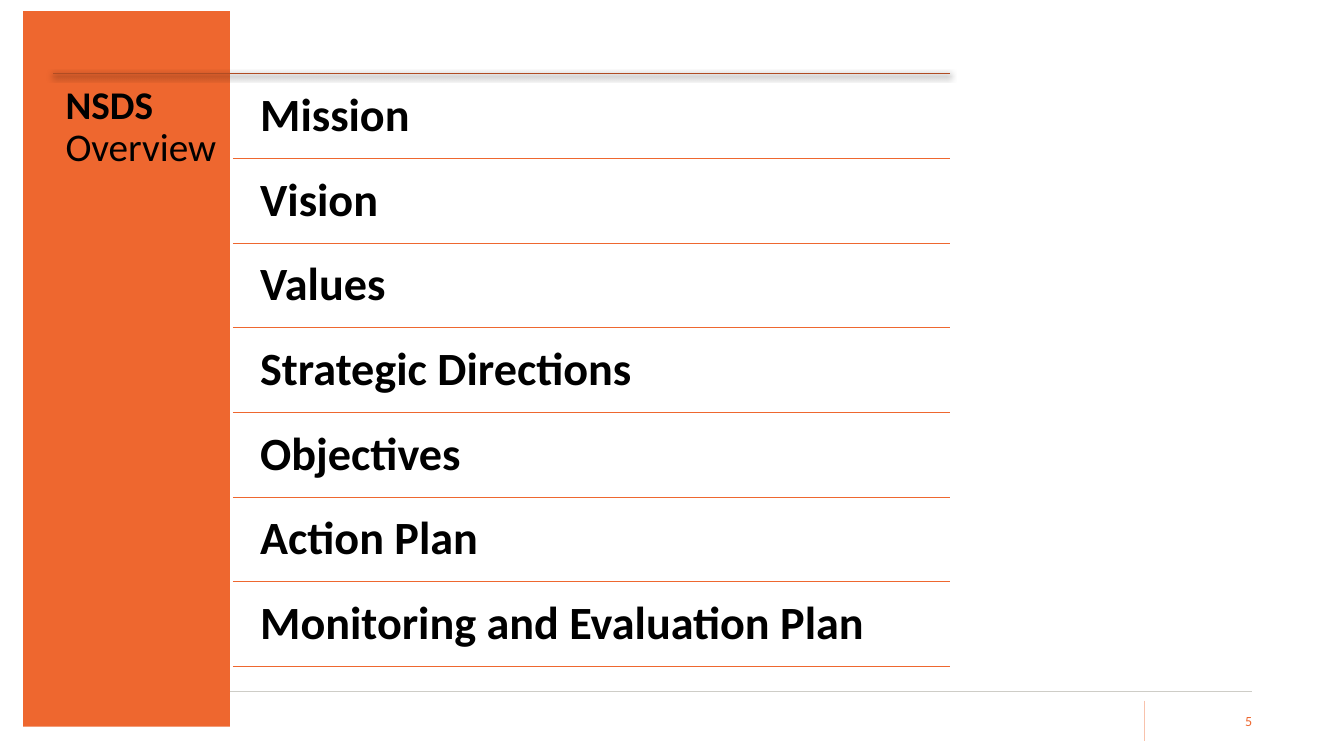
"""Build the NSDS overview slide: an orange side bar and a ruled list of topics."""
from dataclasses import dataclass

from lxml.etree import SubElement
from pptx import Presentation
from pptx.dml.color import RGBColor
from pptx.enum.shapes import MSO_CONNECTOR, MSO_SHAPE
from pptx.enum.text import MSO_ANCHOR, PP_ALIGN
from pptx.oxml.ns import qn
from pptx.util import Pt

PX = 9144


@dataclass(frozen=True)
class Theme:
    font: str = "Calibri"
    ink: str = "000000"
    orange: str = "EE672F"
    rust: str = "B04C23"
    peach: str = "F8C2AC"
    grey: str = "CECDC7"
    topic: int = 33
    title: int = 28
    number: int = 10
    rule: float = 0.5


theme = Theme()
deck = Presentation()
deck.slide_width, deck.slide_height = 1333 * PX, 750 * PX
slide = deck.slides.add_slide(deck.slide_layouts[6])


def add_rule(x1, y1, x2, y2, color):
    """Draw a thin line and return its empty effect list."""
    rule = slide.shapes.add_connector(
        MSO_CONNECTOR.STRAIGHT, x1 * PX, y1 * PX, x2 * PX, y2 * PX)
    rule.line.color.rgb = RGBColor.from_string(color)
    rule.line.width = Pt(theme.rule)
    return SubElement(rule._element.spPr, qn("a:effectLst"))


def add_text(x, y, w, h, pad_x, pad_y, runs, size, color):
    """Place one paragraph of (text, bold) runs and return its frame."""
    frame = slide.shapes.add_textbox(x * PX, y * PX, w * PX, h * PX).text_frame
    frame.word_wrap = True
    frame.margin_left = frame.margin_right = pad_x * PX
    frame.margin_top = frame.margin_bottom = pad_y * PX
    for text, bold in runs:
        run = frame.paragraphs[0].add_run()
        run.text = text
        run.font.name, run.font.size, run.font.bold = theme.font, Pt(size), bold
        run.font.color.rgb = RGBColor.from_string(color)
    return frame


add_rule(92, 686, 1242, 686, theme.grey)
add_rule(1135, 695, 1135, 735, theme.peach)

bar = slide.shapes.add_shape(
    MSO_SHAPE.RECTANGLE, 23 * PX, 11 * PX, 205 * PX, 710 * PX)
bar.shadow.inherit = False
bar.fill.solid()
bar.fill.fore_color.rgb = RGBColor.from_string(theme.orange)
bar.line.fill.background()

number = add_text(1147, 695, 95, 40, 0, 5, [("5", False)],
                  theme.number, theme.orange)
number.vertical_anchor = MSO_ANCHOR.MIDDLE
number.paragraphs[0].alignment = PP_ALIGN.RIGHT

effects = add_rule(53, 73, 942, 73, theme.rust)
shadow = SubElement(effects, qn("a:outerShdw"), blurRad=str(Pt(4.5)),
                    dist=str(Pt(1.5)), dir="5400000", rotWithShape="0")
shade = SubElement(shadow, qn("a:srgbClr"), val=theme.ink)
SubElement(shade, qn("a:alpha"), val="63000")

title = add_text(53, 73, 178, 593, 12, 12, [("NSDS", True), (" Overview", False)],
                 theme.title, theme.ink)
title.paragraphs[0].line_spacing = 0.9

topics = ["Mission", "Vision", "Values", "Strategic Directions", "Objectives",
          "Action Plan", "Monitoring and Evaluation Plan"]
for row, topic in enumerate(topics):
    top = 77 + 84 * row
    frame = add_text(244, top, 698, 80, 14, 14, [(topic, True)],
                     theme.topic, theme.ink)
    frame.paragraphs[0].line_spacing = 0.9
    add_rule(231, top + 80, 942, top + 80, theme.orange)

deck.save("out.pptx")
